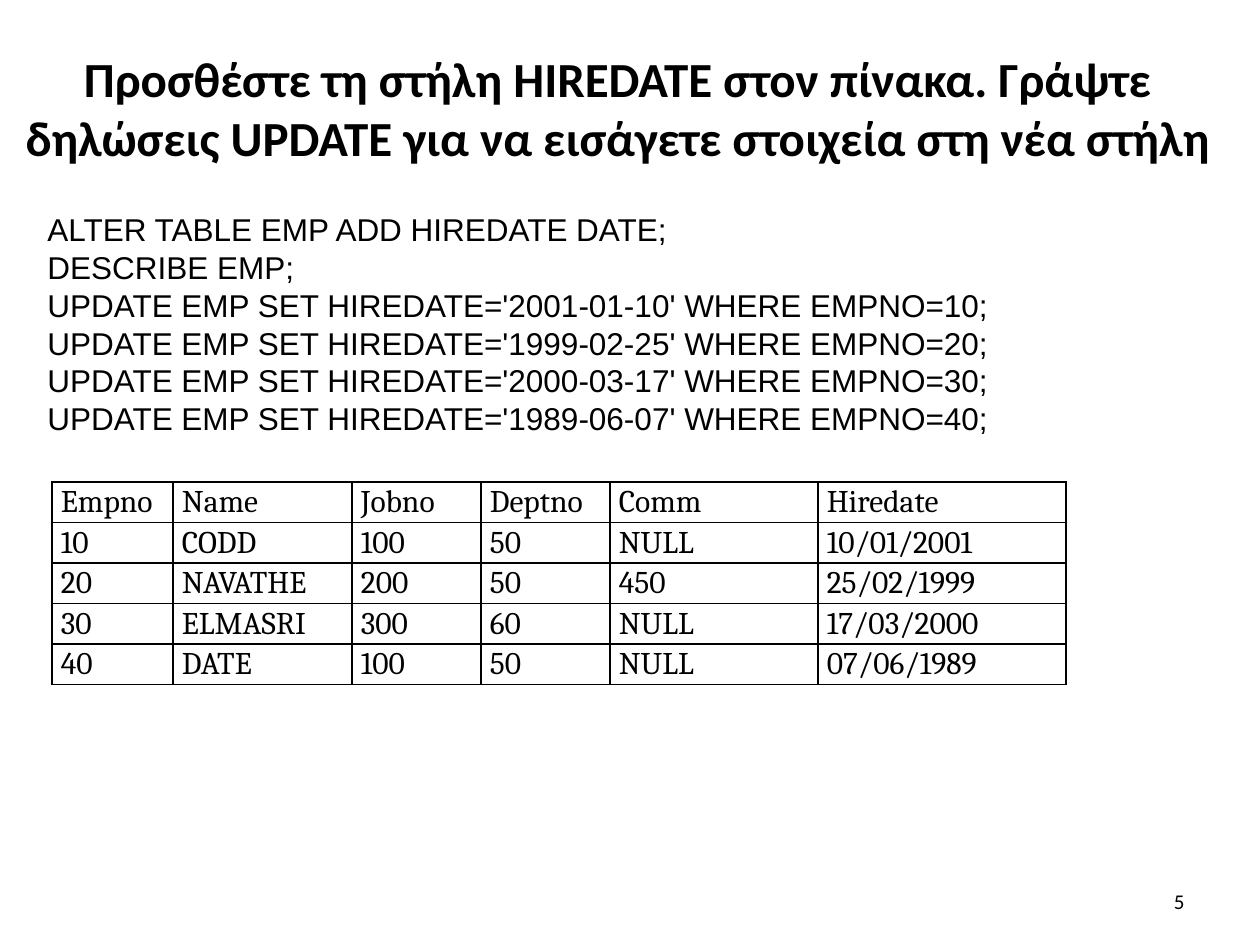
from pptx import Presentation
from pptx.dml.color import RGBColor
from pptx.enum.text import MSO_ANCHOR as Anchor, MSO_AUTO_SIZE as AutoSize, PP_ALIGN as Align
from pptx.oxml.ns import qn
from pptx.util import Emu, Pt
from lxml.etree import SubElement

PX_PER_INCH = 126
BLACK = "000000"

TITLE = ("Προσθέστε τη στήλη HIREDATE στον πίνακα. Γράψτε "
         "δηλώσεις UPDATE για να εισάγετε στοιχεία στη νέα στήλη")
HIRE_DATES = [("2001-01-10", 10), ("1999-02-25", 20), ("2000-03-17", 30), ("1989-06-07", 40)]
STATEMENTS = ["ALTER TABLE EMP ADD HIREDATE DATE;", "DESCRIBE EMP;"] + [
    f"UPDATE EMP SET HIREDATE='{date}' WHERE EMPNO={number};" for date, number in HIRE_DATES]
EMPLOYEES = [
    ["Empno", "Name", "Jobno", "Deptno", "Comm", "Hiredate"],
    ["10", "CODD", "100", "50", "NULL", "10/01/2001"],
    ["20", "NAVATHE", "200", "50", "450", "25/02/1999"],
    ["30", "ELMASRI", "300", "60", "NULL", "17/03/2000"],
    ["40", "DATE", "100", "50", "NULL", "07/06/1989"],
]
COLUMN_WIDTHS = [121, 179, 129, 129, 208, 248]
ROW_HEIGHT = 40


def px(length):
    return Emu(round(length * 914400 / PX_PER_INCH))


def color(value):
    return RGBColor.from_string(value)


def write(frame, lines, font, size, align=Align.LEFT, bold=False, spacing=None):
    """Fill a text frame with one paragraph per line."""
    for index, line in enumerate(lines):
        para = frame.add_paragraph() if index else frame.paragraphs[0]
        para.alignment = align
        if spacing:
            para.line_spacing = spacing
        span = para.add_run()
        span.text = line
        span.font.name = font
        span.font.size = Pt(size)
        span.font.bold = bold
        span.font.color.rgb = color(BLACK)


def set_title(page, left, top, width, height):
    title = page.shapes.title
    title.left, title.top, title.width, title.height = map(px, (left, top, width, height))
    frame = title.text_frame
    frame.auto_size = AutoSize.NONE
    frame.vertical_anchor = Anchor.MIDDLE
    write(frame, [TITLE], "Calibri", 28, Align.CENTER, bold=True)


def add_text(page, left, top, width, height, lines, font, size,
             align=Align.LEFT, anchor=Anchor.TOP):
    box = page.shapes.add_textbox(*map(px, (left, top, width, height)))
    frame = box.text_frame
    frame.word_wrap = True
    frame.vertical_anchor = anchor
    write(frame, lines, font, size, align)


def set_borders(cell):
    """Draw a thin black line on all four sides, ahead of the cell's fill."""
    properties = cell._tc.get_or_add_tcPr()
    for index, side in enumerate(("a:lnL", "a:lnR", "a:lnT", "a:lnB")):
        line = SubElement(properties, qn(side), w=str(Pt(1)))
        fill = SubElement(line, qn("a:solidFill"))
        SubElement(fill, qn("a:srgbClr"), val=BLACK)
        properties.insert(index, line)


def add_grid(page, left, top, rows, widths, row_height):
    table = page.shapes.add_table(
        len(rows), len(widths), px(left), px(top),
        px(sum(widths)), px(row_height * len(rows))).table
    table.first_row = table.horz_banding = False
    for column, width in zip(table.columns, widths):
        column.width = px(width)
    for row, values in zip(table.rows, rows):
        row.height = px(row_height)
        for cell, value in zip(row.cells, values):
            cell.margin_left = cell.margin_right = px(9)
            cell.margin_top = cell.margin_bottom = 0
            cell.fill.background()
            set_borders(cell)
            write(cell.text_frame, [value], "Cambria", 18, spacing=1.07)


def main():
    deck = Presentation()
    deck.slide_width, deck.slide_height = px(1260), px(945)
    page = deck.slides.add_slide(deck.slide_layouts[5])

    # Title and slide number
    set_title(page, 0, 45, 1235, 125)
    add_text(page, 903, 876, 294, 50, ["5"], "Calibri", 12, Align.RIGHT, Anchor.MIDDLE)

    # SQL statements
    add_text(page, 35, 204, 1042, 242, STATEMENTS, "Arial", 18)

    # Resulting employee table
    add_grid(page, 52, 482, EMPLOYEES, COLUMN_WIDTHS, ROW_HEIGHT)

    deck.save("out.pptx")


if __name__ == "__main__":
    main()
